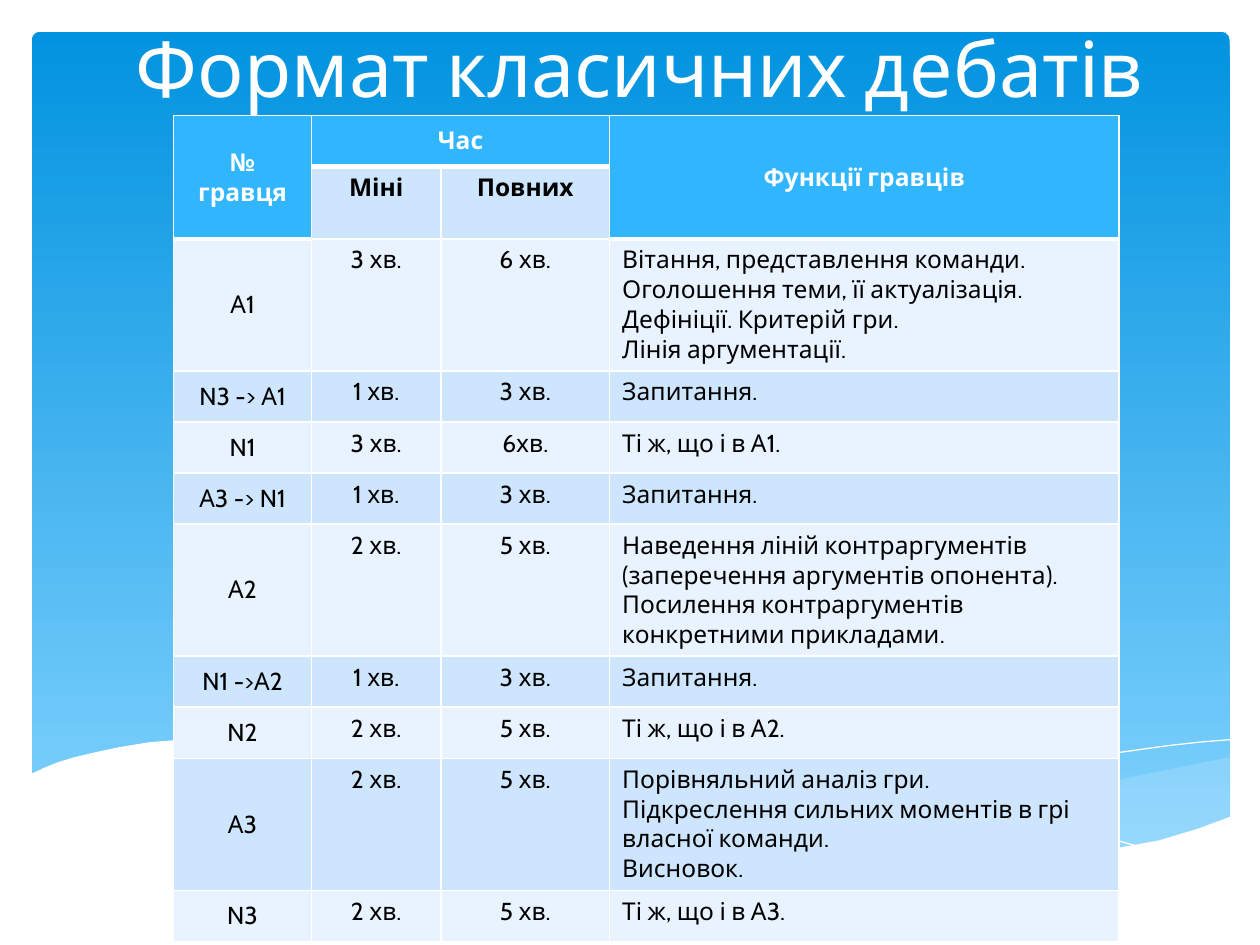
from lxml import etree
from pptx import Presentation
from pptx.dml.color import RGBColor
from pptx.enum.shapes import MSO_SHAPE
from pptx.enum.text import MSO_ANCHOR, MSO_AUTO_SIZE, PP_ALIGN
from pptx.oxml.ns import qn
from pptx.util import Cm, Pt

CENTER, LEFT = PP_ALIGN.CENTER, PP_ALIGN.LEFT
TOP, MIDDLE, BOTTOM = MSO_ANCHOR.TOP, MSO_ANCHOR.MIDDLE, MSO_ANCHOR.BOTTOM
ROUNDED = MSO_SHAPE.ROUNDED_RECTANGLE
NO_AUTOFIT = MSO_AUTO_SIZE.NONE

WHITE = RGBColor(0xFF, 0xFF, 0xFF)
BLACK = RGBColor(0x00, 0x00, 0x00)
SKY_TOP = RGBColor(0x02, 0x93, 0xE0)
SKY_BOTTOM = RGBColor(0x83, 0xD3, 0xFE)
WAVE_BLUE = RGBColor(0xC6, 0xE7, 0xFC)
HEADER_BLUE = RGBColor(0x31, 0xB6, 0xFD)
BAND_DARK = RGBColor(0xCE, 0xE5, 0xFE)
BAND_LIGHT = RGBColor(0xE8, 0xF3, 0xFF)
FONT = "Cabin"

# Wave outlines, in hundredths of an inch
WAVE_UNIT = Cm(0.0254)
RIGHT_WAVE = [(976, 601), (936, 609), (892, 618), (834, 632), (780, 644), (730, 655),
              (662, 667), (692, 671), (733, 676), (770, 679), (815, 680), (855, 678),
              (890, 674), (922, 667), (951, 659), (977, 649), (977, 601)]
MIDDLE_WAVE = [(894, 675), (838, 667), (776, 656), (707, 642), (630, 624), (570, 610),
               (515, 600), (465, 593), (420, 589), (380, 587), (345, 588), (314, 590),
               (287, 593), (343, 601), (405, 613), (450, 624), (530, 642), (602, 657),
               (666, 668), (723, 676), (774, 679), (819, 680), (859, 679), (894, 675)]
LONG_CREST = [(310, 597), (344, 592), (388, 589), (433, 589), (489, 592), (557, 598),
              (637, 610), (696, 621), (761, 635), (832, 652), (908, 673)]
RIGHT_CREST = [(614, 659), (673, 643), (749, 625), (807, 612), (867, 600), (897, 596),
               (925, 592), (952, 589), (976, 587)]
WHITE_WAVE = [(977, 648), (950, 658), (920, 667), (887, 673), (850, 677), (809, 679),
              (761, 677), (708, 672), (648, 664), (579, 651), (503, 635), (447, 622),
              (391, 609), (340, 599), (292, 592), (250, 588), (211, 586), (177, 586),
              (146, 587), (119, 589), (95, 593), (76, 597), (59, 601), (46, 605),
              (36, 609), (23, 615), (23, 731), (977, 731)]

# Speeches: player, time in mini debates, time in full debates, functions
HEADER_ROWS = [
    ("№ гравця", "Час", "", "Функції гравців"),
    ("", "Міні", "Повних", ""),
]
SPEECHES = [
    ("А1", "3 хв.", "6 хв.",
     "Вітання, представлення команди.\nОголошення теми, її актуалізація.\n"
     "Дефініції. Критерій гри.\nЛінія аргументації."),
    ("N3 -> А1", "1 хв.", "3 хв.", "Запитання."),
    ("N1", "3 хв.", "6хв.", "Ті ж, що і в А1."),
    ("А3 -> N1", "1 хв.", "3 хв.", "Запитання."),
    ("А2", "2 хв.", "5 хв.",
     "Наведення ліній контраргументів (заперечення аргументів опонента).\n"
     "Посилення контраргументів конкретними прикладами."),
    ("N1 ->А2", "1 хв.", "3 хв.", "Запитання."),
    ("N2", "2 хв.", "5 хв.", "Ті ж, що і в А2."),
    ("А3", "2 хв.", "5 хв.",
     "Порівняльний аналіз гри.\n"
     "Підкреслення сильних моментів в грі власної команди.\nВисновок."),
    ("N3", "2 хв.", "5 хв.", "Ті ж, що і в А3."),
]
COLUMN_WIDTHS = [2.78, 2.61, 3.4, 10.27]
ROW_HEIGHT, SUBHEADER_HEIGHT, TALL_HEIGHT = 1.03, 1.45, 2.66
# Cells (row, column) that stand on the thick rule below the header
HEADER_EDGE = {(0, 1), (0, 2), (1, 0), (1, 3)}


def add_sky(slide):
    sky = slide.shapes.add_shape(ROUNDED, Cm(0.64), Cm(0.64), Cm(24.15), Cm(16.76))
    sky.adjustments[0] = 0.01
    sky.shadow.inherit = False
    sky.line.fill.background()
    sky.fill.gradient()
    sky.fill.gradient_angle = 270
    for stop, color in zip(sky.fill.gradient_stops, (SKY_TOP, SKY_BOTTOM)):
        stop.color.rgb = color


def add_outline(slide, points, close):
    builder = slide.shapes.build_freeform(*points[0], scale=WAVE_UNIT)
    builder.add_line_segments(points[1:], close=close)
    outline = builder.convert_to_shape()
    outline.shadow.inherit = False
    return outline


def add_wave(slide, points, color, opacity=100):
    wave = add_outline(slide, points, close=True)
    wave.line.fill.background()
    wave.fill.solid()
    wave.fill.fore_color.rgb = color
    if opacity < 100:
        color_element = wave.element.spPr.find(qn("a:solidFill"))[0]
        etree.SubElement(color_element, qn("a:alpha"), val=str(opacity * 1000))


def add_crest(slide, points):
    crest = add_outline(slide, points, close=False)
    crest.fill.background()
    crest.line.color.rgb = WHITE
    crest.line.width = Pt(0)


def format_text(frame, size, color, bold, align):
    for paragraph in frame.paragraphs:
        paragraph.alignment = align
        for run in paragraph.runs:
            run.font.name = FONT
            run.font.size = Pt(size)
            run.font.bold = bold
            run.font.color.rgb = color


def place_title(slide):
    title = slide.shapes.title
    slide.shapes.element.append(title.element)  # in front of the waves
    title.left, title.top, title.width, title.height = Cm(2.11), Cm(-1.68), Cm(21.59), Cm(4.09)
    frame = title.text_frame
    frame.text = "Формат класичних дебатів"
    frame.auto_size = NO_AUTOFIT
    frame.vertical_anchor = BOTTOM
    format_text(frame, 44, WHITE, False, CENTER)


def set_borders(cell, top, bottom):
    properties = cell._tc.get_or_add_tcPr()
    for side, width in (("L", 1), ("R", 1), ("T", top), ("B", bottom)):
        line = etree.SubElement(properties, qn(f"a:ln{side}"), w=str(Pt(width)))
        fill = etree.SubElement(line, qn("a:solidFill"))
        etree.SubElement(fill, qn("a:srgbClr"), val=str(WHITE))


def format_cell(cell, row, column, text):
    in_header = row == 0 or (row == 1 and column in (0, 3))
    set_borders(cell,
                top=3 if (row - 1, column) in HEADER_EDGE else 1,
                bottom=3 if row == 0 or (row, column) in HEADER_EDGE else 1)
    cell.fill.solid()
    band = BAND_DARK if row % 2 else BAND_LIGHT
    cell.fill.fore_color.rgb = HEADER_BLUE if in_header else band
    cell.vertical_anchor = MIDDLE if in_header or column == 0 else TOP
    if text:
        cell.text_frame.text = text
    format_text(cell.text_frame, 14, WHITE if in_header else BLACK, row < 2,
                LEFT if column == 3 and row > 1 else CENTER)


def add_format_table(slide):
    rows = HEADER_ROWS + SPEECHES
    heights = [TALL_HEIGHT if "\n" in row[3] else ROW_HEIGHT for row in rows]
    heights[1] = SUBHEADER_HEIGHT
    table = slide.shapes.add_table(len(rows), len(COLUMN_WIDTHS), Cm(3.5), Cm(2.33),
                                   Cm(sum(COLUMN_WIDTHS)), Cm(sum(heights))).table
    table.horz_banding = False
    for column, width in zip(table.columns, COLUMN_WIDTHS):
        column.width = Cm(width)
    for row, height in zip(table.rows, heights):
        row.height = Cm(height)
    for r, row in enumerate(rows):
        for c, text in enumerate(row):
            format_cell(table.cell(r, c), r, c, text)
    # Header spans
    for start, end in (((0, 0), (1, 0)), ((0, 1), (0, 2)), ((0, 3), (1, 3))):
        table.cell(*start).merge(table.cell(*end))


def main():
    prs = Presentation()
    prs.slide_width, prs.slide_height = Cm(25.4), Cm(19.05)
    slide = prs.slides.add_slide(prs.slide_layouts[5])

    # Background
    add_sky(slide)
    add_wave(slide, RIGHT_WAVE, WAVE_BLUE, 29)
    add_wave(slide, MIDDLE_WAVE, WAVE_BLUE, 40)
    add_crest(slide, LONG_CREST)
    add_crest(slide, RIGHT_CREST)
    add_wave(slide, WHITE_WAVE, WHITE)

    # Content
    place_title(slide)
    add_format_table(slide)
    prs.save("out.pptx")


if __name__ == "__main__":
    main()
